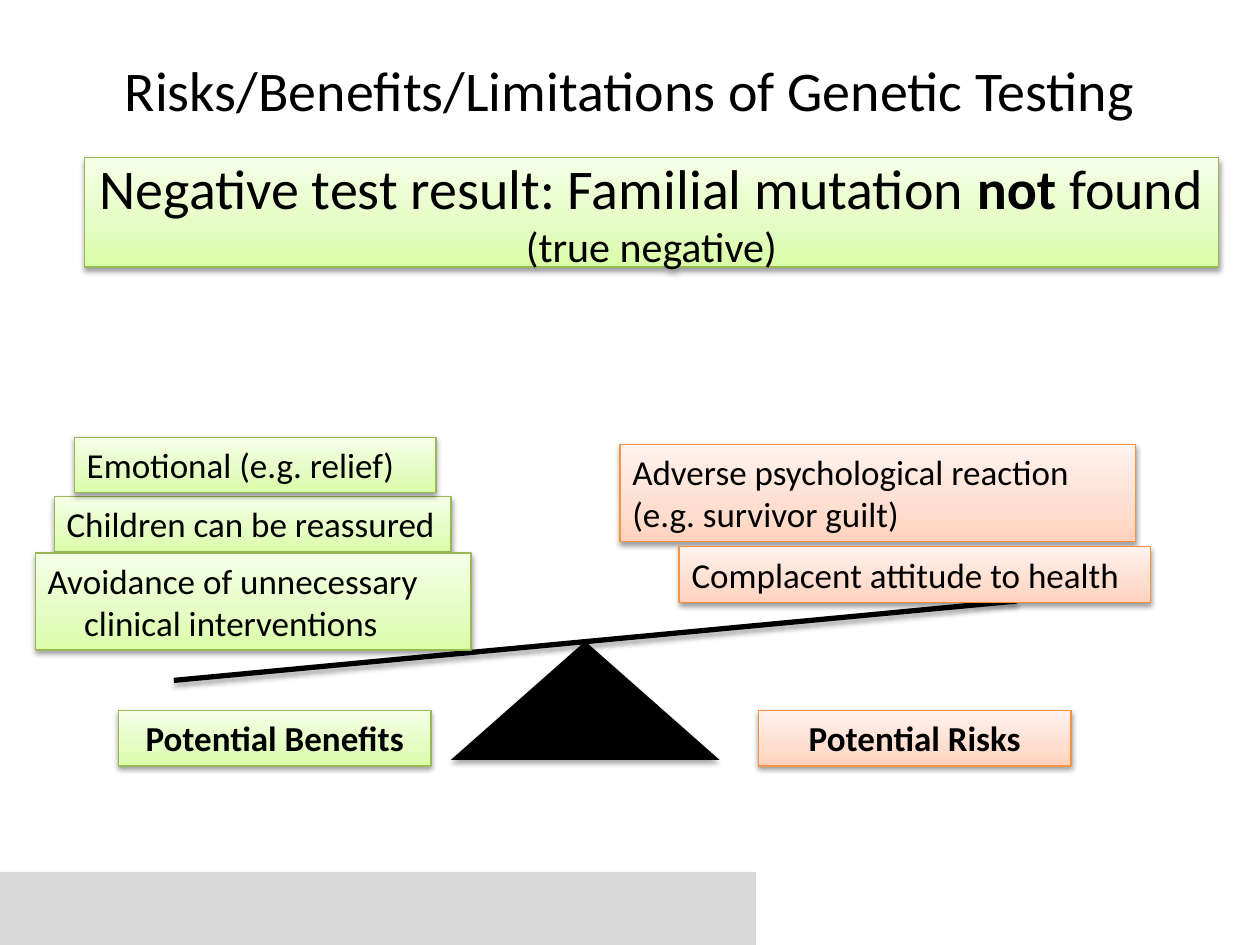
from dataclasses import dataclass

from lxml import etree
from pptx import Presentation
from pptx.dml.color import RGBColor
from pptx.enum.shapes import MSO_CONNECTOR, MSO_SHAPE
from pptx.enum.text import MSO_ANCHOR, MSO_AUTO_SIZE, PP_ALIGN
from pptx.oxml import parse_xml
from pptx.oxml.ns import nsdecls, qn
from pptx.util import Inches, Pt

RECTANGLE = MSO_SHAPE.RECTANGLE
TRIANGLE = MSO_SHAPE.ISOSCELES_TRIANGLE
STRAIGHT = MSO_CONNECTOR.STRAIGHT
TOP, MIDDLE = MSO_ANCHOR.TOP, MSO_ANCHOR.MIDDLE
LEFT, CENTER = PP_ALIGN.LEFT, PP_ALIGN.CENTER
GROW = MSO_AUTO_SIZE.SHAPE_TO_FIT_TEXT

BLACK = RGBColor(0x00, 0x00, 0x00)
FOOTER_GRAY = RGBColor(0xD9, 0xD9, 0xD9)
FONT = "Calibri"
HANGING = 0.29
ROW, TWO_ROWS = 0.44, 0.77


@dataclass(frozen=True)
class Palette:
    stops: tuple[tuple[int, RGBColor], ...]
    outline: RGBColor


@dataclass(frozen=True)
class TextRun:
    text: str
    size: int = 20
    bold: bool = False


@dataclass(frozen=True)
class Card:
    left: float
    top: float
    width: float
    height: float
    palette: Palette
    runs: tuple[TextRun, ...]
    align: PP_ALIGN = LEFT
    hanging: float = 0
    grows: bool = True


GREEN = Palette(
    (
        (0, RGBColor(0xDA, 0xFD, 0xA7)),
        (35, RGBColor(0xE4, 0xFC, 0xC2)),
        (100, RGBColor(0xF5, 0xFF, 0xE7)),
    ),
    RGBColor(0x98, 0xB9, 0x55),
)
ORANGE = Palette(
    (
        (0, RGBColor(0xFF, 0xD2, 0xBD)),
        (35, RGBColor(0xFF, 0xDE, 0xD0)),
        (100, RGBColor(0xFF, 0xF2, 0xED)),
    ),
    RGBColor(0xF6, 0x92, 0x40),
)

CARDS = (
    Card(0.43, 3.94, 3.15, ROW, GREEN,
         (TextRun("Children can be reassured"),), hanging=HANGING),
    Card(0.28, 4.39, 3.46, TWO_ROWS, GREEN,
         (TextRun("Avoidance of unnecessary clinical interventions"),), hanging=HANGING),
    Card(0.94, 5.64, 2.48, ROW, GREEN,
         (TextRun("Potential Benefits", bold=True),), CENTER),
    Card(6.02, 5.64, 2.48, ROW, ORANGE,
         (TextRun("Potential Risks", bold=True),), CENTER),
    Card(0.67, 1.25, 9, 0.87, GREEN,
         (
             TextRun("Negative test result: Familial mutation ", 32),
             TextRun("not", 32, True),
             TextRun(" found ", 32),
             TextRun("(true negative)", 24),
         ), CENTER, grows=False),
    Card(0.59, 3.47, 2.87, ROW, GREEN,
         (TextRun("Emotional (e.g. relief)"),), hanging=HANGING),
    Card(4.92, 3.53, 4.09, TWO_ROWS, ORANGE,
         (TextRun("Adverse psychological reaction (e.g. survivor guilt)"),)),
    Card(5.39, 4.34, 3.74, ROW, ORANGE,
         (TextRun("Complacent attitude to health"),)),
)


def format_font(font, size: int, bold: bool = False) -> None:
    font.name = FONT
    font.size = Pt(size)
    font.bold = bold
    font.color.rgb = BLACK


def set_shadow(shape, opacity: int, distance: float) -> None:
    properties = shape._element.spPr
    for effects in properties.findall(qn("a:effectLst")):
        properties.remove(effects)
    properties.append(parse_xml(
        f'<a:effectLst {nsdecls("a")}><a:outerShdw blurRad="{Pt(3.1)}" '
        f'dist="{Pt(distance)}" dir="5400000" rotWithShape="0">'
        f'<a:srgbClr val="{BLACK}"><a:alpha val="{opacity * 1000}"/></a:srgbClr>'
        "</a:outerShdw></a:effectLst>"
    ))


def set_gradient(shape, palette: Palette) -> None:
    shape.fill.gradient()
    shape.fill.gradient_angle = 90
    stop_list = shape._element.spPr.find(qn("a:gradFill")).find(qn("a:gsLst"))
    for stop in list(stop_list):
        stop_list.remove(stop)
    for position, color in palette.stops:
        stop = etree.SubElement(stop_list, qn("a:gs"), pos=str(position * 1000))
        etree.SubElement(stop, qn("a:srgbClr"), val=str(color))


def add_plain_shape(slide, kind: MSO_SHAPE, left: float, top: float,
                    width: float, height: float, color: RGBColor):
    shape = slide.shapes.add_shape(
        kind, Inches(left), Inches(top), Inches(width), Inches(height))
    shape.shadow.inherit = False
    shape.fill.solid()
    shape.fill.fore_color.rgb = color
    shape.line.fill.background()
    return shape


def add_beam(slide) -> None:
    beam = slide.shapes.add_connector(
        STRAIGHT, Inches(1.38), Inches(5.4), Inches(8.07), Inches(4.77))
    beam.line.color.rgb = BLACK
    beam.line.width = Pt(3)
    set_shadow(beam, 35, 1.8)


def add_card(slide, card: Card) -> None:
    shape = slide.shapes.add_shape(
        RECTANGLE, Inches(card.left), Inches(card.top),
        Inches(card.width), Inches(card.height))
    set_gradient(shape, card.palette)
    shape.line.color.rgb = card.palette.outline
    shape.line.width = Pt(0.75)
    set_shadow(shape, 38, 1.6)
    text_frame = shape.text_frame
    text_frame.word_wrap = True
    text_frame.vertical_anchor = TOP if card.grows else MIDDLE
    if card.grows:
        text_frame.auto_size = GROW
    paragraph = text_frame.paragraphs[0]
    paragraph.alignment = card.align
    if card.hanging:
        properties = paragraph._p.get_or_add_pPr()
        properties.set("marL", str(Inches(card.hanging)))
        properties.set("indent", str(-Inches(card.hanging)))
    for text_run in card.runs:
        run = paragraph.add_run()
        run.text = text_run.text
        format_font(run.font, text_run.size, text_run.bold)


def add_title(slide) -> None:
    title = slide.shapes.title
    title.left, title.top = Inches(0.5), Inches(0.08)
    title.width, title.height = Inches(9), Inches(1.25)
    title.text_frame.text = "Risks/Benefits/Limitations of Genetic Testing"
    title.text_frame.vertical_anchor = MIDDLE
    paragraph = title.text_frame.paragraphs[0]
    paragraph.alignment = CENTER
    format_font(paragraph.runs[0].font, 32)


def main() -> None:
    presentation = Presentation()
    presentation.slide_width, presentation.slide_height = Inches(10), Inches(7.5)
    slide = presentation.slides.add_slide(presentation.slide_layouts[5])
    add_title(slide)
    add_plain_shape(slide, RECTANGLE, 0, 6.92, 6, 0.58, FOOTER_GRAY)
    fulcrum = add_plain_shape(slide, TRIANGLE, 3.58, 5.09, 2.13, 0.94, BLACK)
    set_shadow(fulcrum, 35, 1.8)
    add_beam(slide)
    for card in CARDS:
        add_card(slide, card)
    presentation.save("out.pptx")


if __name__ == "__main__":
    main()
